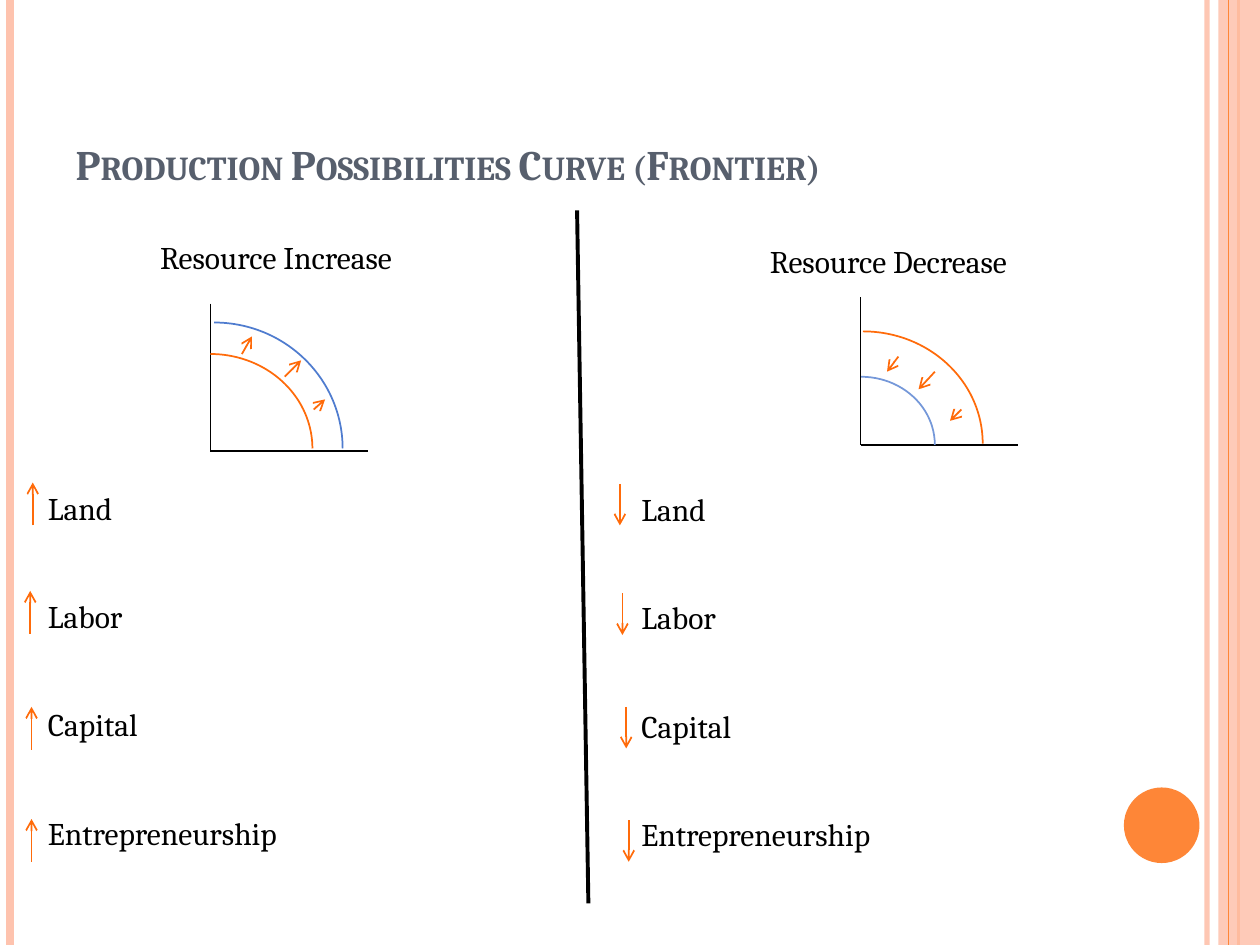
from pptx import Presentation, util as u
from pptx.dml.color import RGBColor
from pptx.enum import shapes, text
from pptx.oxml.ns import qn
from lxml import etree

BLACK = RGBColor(0x00, 0x00, 0x00)
SLATE = RGBColor(0x57, 0x5F, 0x6D)
PEACH = RGBColor(0xFE, 0xC3, 0xAE)
ORANGE = RGBColor(0xFE, 0x86, 0x37)
BRIGHT_ORANGE = RGBColor(0xFF, 0x6B, 0x0A)
BLUE = RGBColor(0x4F, 0x7C, 0xCF)
LIGHT_BLUE = RGBColor(0x75, 0x98, 0xD9)
FONT = "Cambria"
RESOURCES = ["Land", "Labor", "Capital", "Entrepreneurship"]
ROW_GAP = 40.3

presentation = Presentation()
presentation.slide_width, presentation.slide_height = u.Inches(10), u.Inches(7.5)
slide = presentation.slides.add_slide(presentation.slide_layouts[4])


def draw_line(start, end, color, width, arrow=False, opacity=100):
    line = slide.shapes.add_connector(
        shapes.MSO_CONNECTOR.STRAIGHT, *(u.Inches(value) for value in (*start, *end)))
    line.line.color.rgb = color
    line.line.width = u.Pt(width)
    properties = line._element.spPr
    if opacity < 100:
        fill = properties.find(".//" + qn("a:srgbClr"))
        etree.SubElement(fill, qn("a:alpha"), val=str(opacity * 1000))
    if arrow:
        etree.SubElement(properties.find(qn("a:ln")), qn("a:tailEnd"), type="arrow")
    etree.SubElement(properties, qn("a:effectLst"))


def write_placeholder(placeholder, box, lines, size, color, bold=False, gap=0):
    """Place the placeholder and fill it with unbulleted, left-aligned lines."""
    placeholder.left, placeholder.top, placeholder.width, placeholder.height = map(u.Inches, box)
    frame = placeholder.text_frame
    frame.auto_size = text.MSO_AUTO_SIZE.NONE
    frame.vertical_anchor = text.MSO_ANCHOR.TOP
    frame.word_wrap = False
    for index, line in enumerate(lines):
        paragraph = frame.add_paragraph() if index else frame.paragraphs[0]
        paragraph.alignment = text.PP_ALIGN.LEFT
        paragraph.space_before, paragraph.space_after = u.Pt(0), u.Pt(gap)
        properties = paragraph._p.get_or_add_pPr()
        properties.set("marL", "0")
        properties.set("indent", "0")
        etree.SubElement(properties, qn("a:buNone"))
        run = paragraph.add_run()
        run.text = line
        run.font.name, run.font.size, run.font.bold = FONT, u.Pt(size), bold
        run.font.color.rgb = color


# Side rails and corner dot
for x, color, width, opacity in [(9.58, PEACH, 3, 93), (0.08, PEACH, 4.5, 100),
                                 (9.83, ORANGE, 1.5, 100)]:
    draw_line((x, 0), (x, 7.5), color, width, opacity=opacity)
for kind, box, color, opacity in [
        (shapes.MSO_SHAPE.RECTANGLE, (9.67, 0, 0.33, 7.5), PEACH, 87),
        (shapes.MSO_SHAPE.OVAL, (8.92, 6.25, 0.6, 0.6), ORANGE, 100)]:
    shape = slide.shapes.add_shape(kind, *map(u.Inches, box))
    shape.shadow.inherit = False
    shape.fill.solid()
    shape.fill.fore_color.rgb = color
    shape.line.fill.background()
    if opacity < 100:
        fill = shape._element.spPr.find(".//" + qn("a:srgbClr"))
        etree.SubElement(fill, qn("a:alpha"), val=str(opacity * 1000))
draw_line((9.75, 0), (9.75, 7.5), ORANGE, 0.75)

# Title
title = slide.shapes.title
write_placeholder(title, (0.5, 0.3, 8.17, 1.25),
                  ["Production Possibilities Curve (Frontier)"], 24, SLATE, bold=True)
title.text_frame.vertical_anchor = text.MSO_ANCHOR.BOTTOM
title.text_frame.word_wrap = True
title.text_frame.paragraphs[0].runs[0].font._element.set("cap", "small")

# Headings and resource lists
for heading_index, heading, heading_box, list_box in [
        (1, "Resource Increase", (1.17, 1.84, 2.32, 0.4), (0.28, 3.83, 2.3, 3.13)),
        (3, "Resource Decrease", (6.01, 1.87, 2.39, 0.4), (4.99, 3.84, 2.3, 3.13))]:
    write_placeholder(slide.placeholders[heading_index], heading_box, [heading], 18, BLACK)
    write_placeholder(slide.placeholders[heading_index + 1], list_box,
                      RESOURCES, 18, BLACK, gap=ROW_GAP)

# Axes of both graphs
for x, y in [(1.67, 3.58), (6.83, 3.53)]:
    draw_line((x, y - 1.17), (x, y), BLACK, 1)
    draw_line((x, y), (x + 1.25, y), BLACK, 1)

# Frontier curves
for box, color in [((0.86, 2.81, 1.62, 1.5), BRIGHT_ORANGE),
                   ((0.68, 2.56, 2.04, 2), BLUE),
                   ((5.9, 2.63, 1.9, 1.78), BRIGHT_ORANGE),
                   ((6.25, 2.99, 1.17, 1.08), LIGHT_BLUE)]:
    curve = slide.shapes.add_shape(shapes.MSO_SHAPE.ARC, *map(u.Inches, box))
    curve.shadow.inherit = False
    curve.fill.background()
    curve.line.color.rgb = color
    curve.line.width = u.Pt(1)

# Shift arrows: outward on the left, inward on the right
for start, end in [((1.92, 2.81), (2, 2.67)), ((2.26, 2.99), (2.39, 2.86)),
                   ((2.49, 3.25), (2.58, 3.17)), ((7.13, 2.83), (7.04, 2.95)),
                   ((7.42, 2.95), (7.29, 3.09)), ((7.63, 3.25), (7.54, 3.34))]:
    draw_line(start, end, BRIGHT_ORANGE, 1, arrow=True)

# Divider
draw_line((4.58, 1.67), (4.67, 7.17), BLACK, 2.25)

# Up and down arrows beside the resources
for x, top in [(0.26, 3.83), (0.24, 4.69), (0.25, 5.61), (0.25, 6.5)]:
    draw_line((x, top + 0.34), (x, top), BRIGHT_ORANGE, 1, arrow=True)
for x, top in [(4.92, 3.84), (4.94, 4.71), (4.97, 5.61), (4.99, 6.51)]:
    draw_line((x, top), (x, top + 0.33), BRIGHT_ORANGE, 1, arrow=True)

presentation.save("out.pptx")
